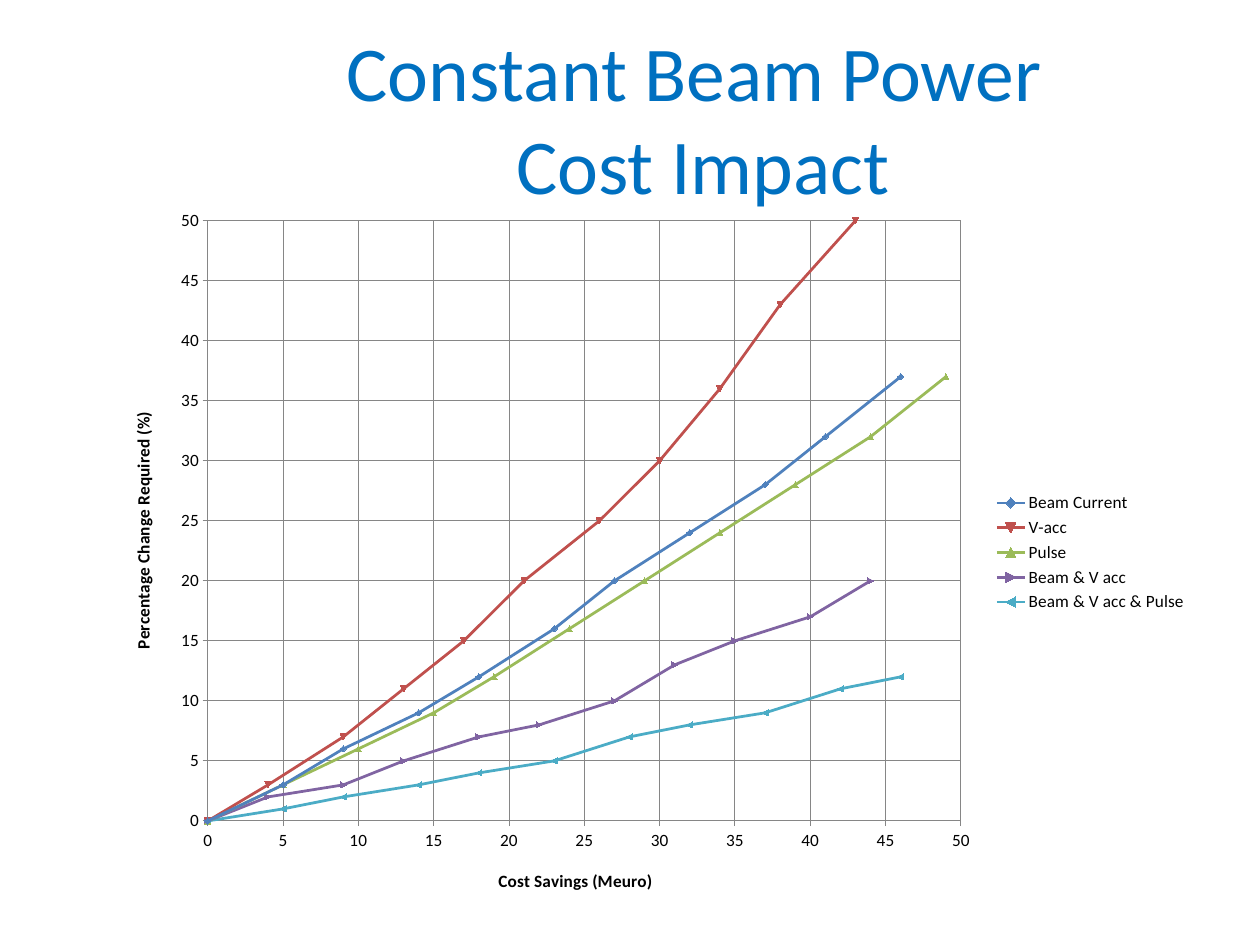
"""Build the slide on cost impact at constant beam power."""
import lxml.etree
import pptx
import pptx.chart.data
import pptx.dml.color
import pptx.enum.chart
import pptx.enum.text
import pptx.oxml.ns
import pptx.util

WIDTH, HEIGHT = pptx.util.Inches(14.22), pptx.util.Inches(10.67)
FONT = "Calibri"
COLOURS = {
    "title": "0070C0",
    "text": "000000",
    "grid": "868686",
    "Beam Current": "4F81BD",
    "V-acc": "C0504D",
    "Pulse": "9BBB59",
    "Beam & V acc": "8064A2",
    "Beam & V acc & Pulse": "4BACC6",
}
SINGLE_CHANGE = [0, 3, 6, 9, 12, 16, 20, 24, 28, 32, 37]
CURVES = {
    "Beam Current": ([0, 5, 9, 14, 18, 23, 27, 32, 37, 41, 46], SINGLE_CHANGE),
    "V-acc": (
        [0, 4, 9, 13, 17, 21, 26, 30, 34, 38, 43],
        [0, 3, 7, 11, 15, 20, 25, 30, 36, 43, 50],
    ),
    "Pulse": ([0, 5, 10, 15, 19, 24, 29, 34, 39, 44, 49], SINGLE_CHANGE),
    "Beam & V acc": (
        [0, 4, 9, 13, 18, 22, 27, 31, 35, 40, 44],
        [0, 2, 3, 5, 7, 8, 10, 13, 15, 17, 20],
    ),
    "Beam & V acc & Pulse": (
        [0, 5, 9, 14, 18, 23, 28, 32, 37, 42, 46],
        [0, 1, 2, 3, 4, 5, 7, 8, 9, 11, 12],
    ),
}
TITLE_PERCENT = (16.53, 4.03, 78.48, 16.68)
CHART_PERCENT = (8.93, 20.65, 86.08, 75.63)
PLOT_PERCENT = {"x": 8.78, "y": 3.57, "w": 69.45, "h": 84}


def place(percents):
    """Turn percentages of the slide into left, top, width and height."""
    return [int(part * size / 100) for part, size in zip(percents, (WIDTH, HEIGHT) * 2)]


def style_font(font, size, colour, bold=False):
    """Set the face, size, colour and weight of a font."""
    font.name, font.size, font.bold = FONT, pptx.util.Pt(size), bold
    font.color.rgb = pptx.dml.color.RGBColor.from_string(COLOURS[colour])


def style_line(line, width, colour):
    """Set the width and colour of a line."""
    line.width = pptx.util.Pt(width)
    line.color.rgb = pptx.dml.color.RGBColor.from_string(COLOURS[colour])


def add_title(slide, text):
    """Add the centred slide title."""
    frame = slide.shapes.add_textbox(*place(TITLE_PERCENT)).text_frame
    frame.word_wrap = True
    frame.vertical_anchor = pptx.enum.text.MSO_ANCHOR.MIDDLE
    frame.margin_left = frame.margin_right = pptx.util.Inches(0.14)
    frame.margin_top = frame.margin_bottom = pptx.util.Inches(0.07)
    frame.text = text
    paragraph = frame.paragraphs[0]
    paragraph.alignment = pptx.enum.text.PP_ALIGN.CENTER
    for run in paragraph.runs:
        style_font(run.font, 63, "title")


def style_axis(axis, title, rotation):
    """Give an axis its scale, gridlines and title."""
    axis.minimum_scale, axis.maximum_scale, axis.major_unit = 0, 50, 5
    axis.has_major_gridlines = True
    axis.major_tick_mark = pptx.enum.chart.XL_TICK_MARK.OUTSIDE
    axis.minor_tick_mark = pptx.enum.chart.XL_TICK_MARK.NONE
    for line in (axis.format.line, axis.major_gridlines.format.line):
        style_line(line, 0.75, "grid")
    style_font(axis.tick_labels.font, 14, "text")
    frame = axis.axis_title.text_frame
    frame.text = title
    frame._txBody.bodyPr.set("rot", str(rotation * 60000))
    style_font(frame.paragraphs[0].runs[0].font, 14, "text", bold=True)


def fix_plot_area(chart):
    """Pin the inner plot area to its percentages of the chart."""
    name = pptx.oxml.ns.qn
    plot_area = chart._chartSpace.chart.plotArea
    for old_layout in plot_area.findall(name("c:layout")):
        plot_area.remove(old_layout)
    layout = lxml.etree.Element(name("c:layout"))
    manual = lxml.etree.SubElement(layout, name("c:manualLayout"))
    settings = {"layoutTarget": "inner", "xMode": "edge", "yMode": "edge"}
    settings.update({tag: part / 100 for tag, part in PLOT_PERCENT.items()})
    for tag, value in settings.items():
        lxml.etree.SubElement(manual, name(f"c:{tag}")).set("val", str(value))
    plot_area.insert(0, layout)


def add_curves(slide):
    """Add the scatter chart of required change against savings."""
    data = pptx.chart.data.XyChartData()
    for name, (savings, changes) in CURVES.items():
        series = data.add_series(name)
        for saving, change in zip(savings, changes):
            series.add_data_point(saving, change)
    kind = pptx.enum.chart.XL_CHART_TYPE.XY_SCATTER_LINES
    chart = slide.shapes.add_chart(kind, *place(CHART_PERCENT), data).chart
    chart.has_title = False
    style_font(chart.font, 14, "text")
    chart.has_legend = True
    chart.legend.position = pptx.enum.chart.XL_LEGEND_POSITION.RIGHT
    chart.legend.include_in_layout = False
    style_font(chart.legend.font, 14, "text")
    style_axis(chart.category_axis, "Cost Savings (Meuro)", 0)
    style_axis(chart.value_axis, "Percentage Change Required (%)", -90)
    chart.plots[0].vary_by_categories = False
    for series in chart.plots[0].series:
        series.smooth = False
        style_line(series.format.line, 2.25, series.name)
    fix_plot_area(chart)


def main():
    """Build and save the slide."""
    presentation = pptx.Presentation()
    presentation.slide_width, presentation.slide_height = WIDTH, HEIGHT
    slide = presentation.slides.add_slide(presentation.slide_layouts[6])
    add_title(slide, "Constant Beam Power \vCost Impact")
    add_curves(slide)
    presentation.save("out.pptx")


if __name__ == "__main__":
    main()
